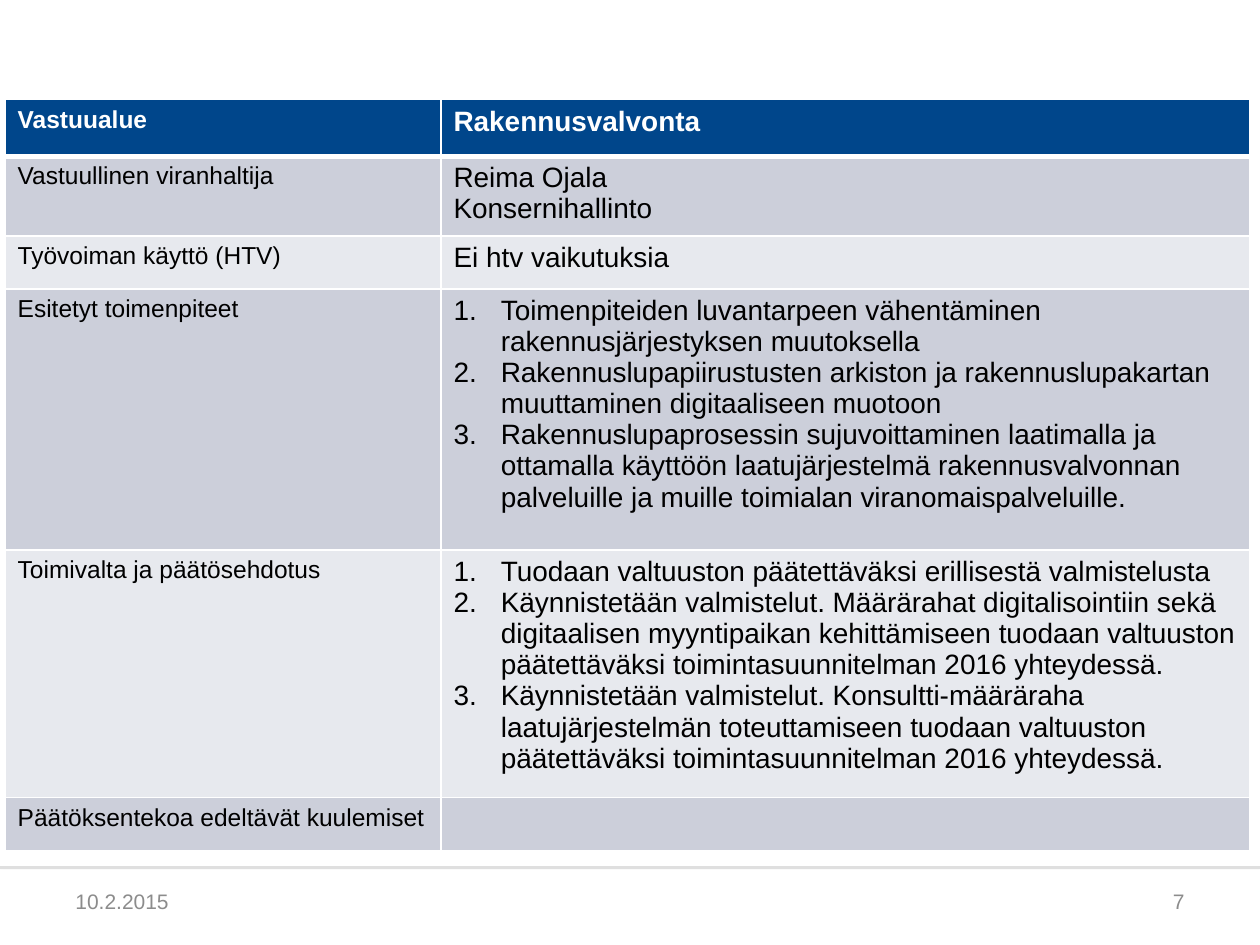
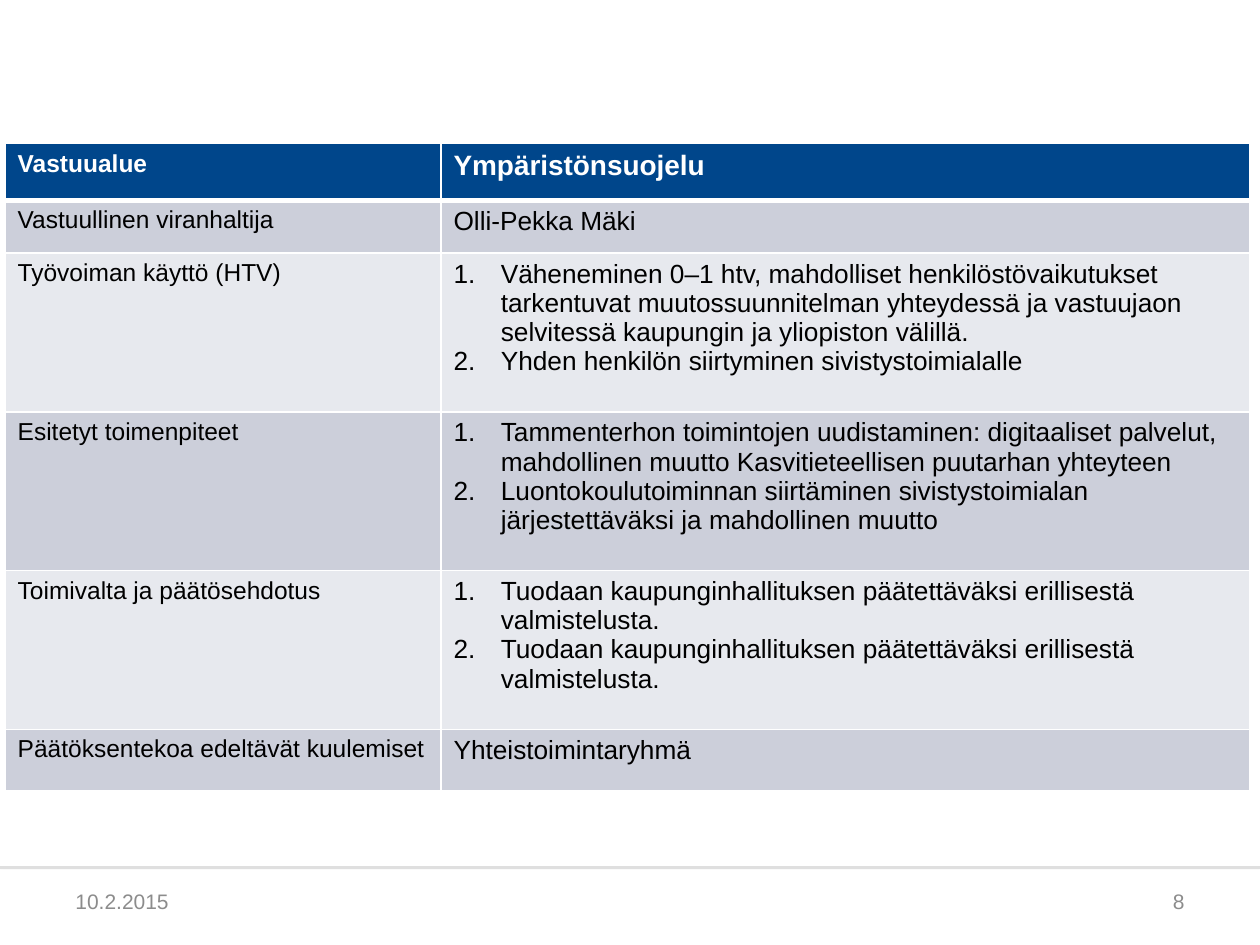
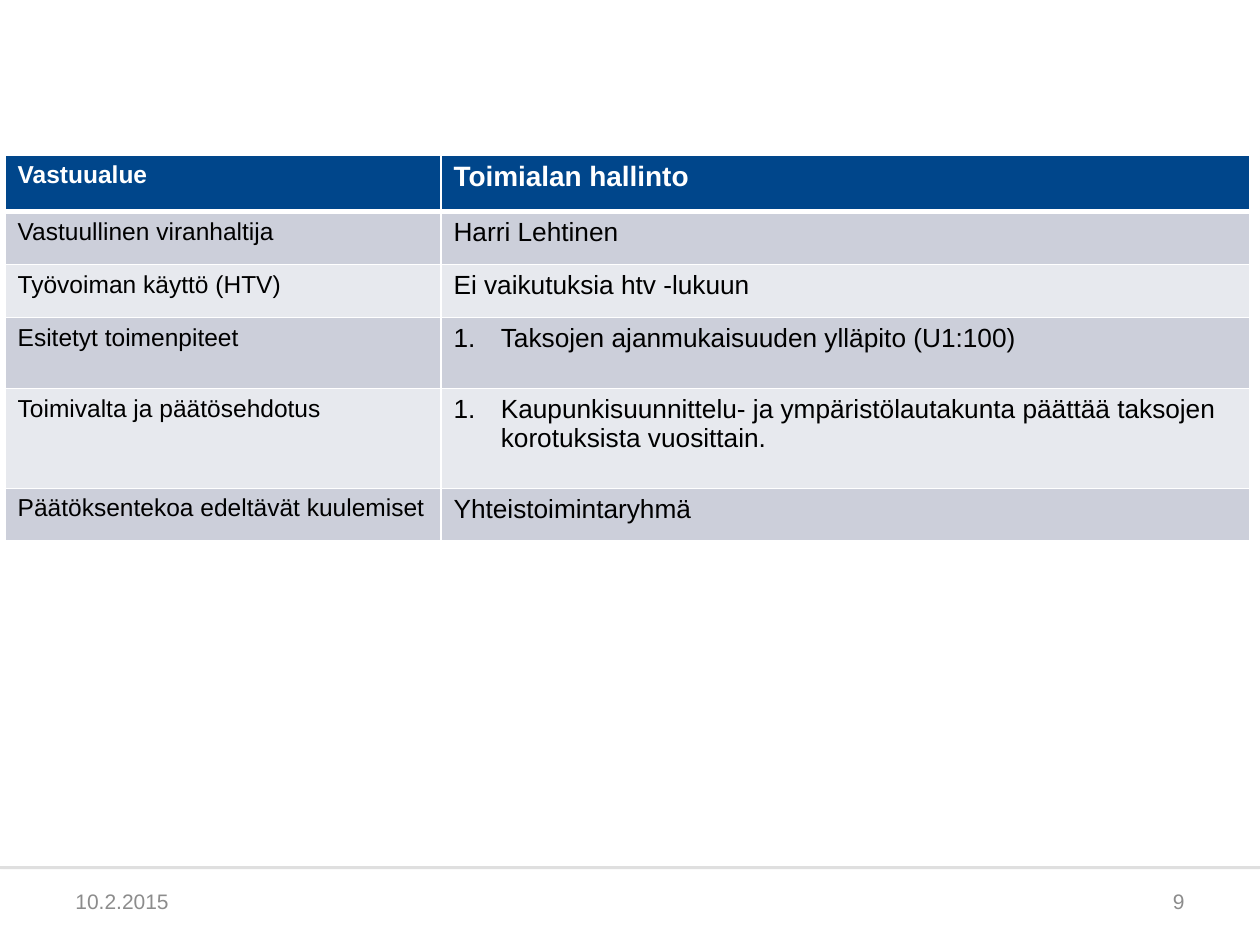
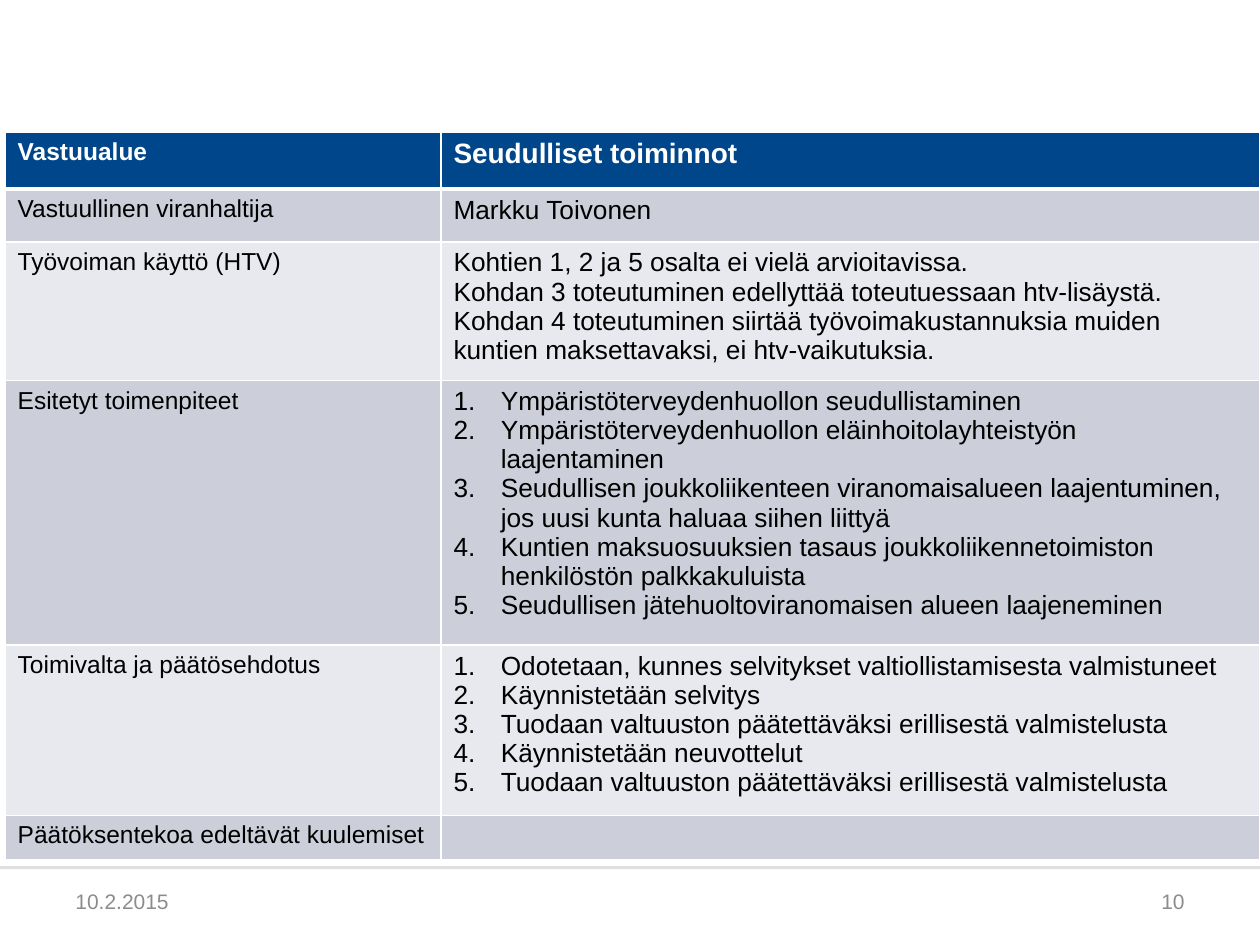
from lxml.etree import SubElement
from pptx import Presentation
from pptx.dml.color import RGBColor
from pptx.enum.shapes import MSO_CONNECTOR, MSO_SHAPE
from pptx.enum.text import MSO_ANCHOR, PP_ALIGN
from pptx.oxml.ns import qn
from pptx.util import Pt

FONT = "Arial"
WHITE, BLACK, GREY, RULE = "FFFFFF", "000000", "8C8C8C", "DFDFDF"
HEAD, DARK, LIGHT = "00468B", "CCCFDA", "E7E9EE"
WIDE, HIGH = 720, 540
DATE, FIRST = "10.2.2015", 7
LEFT, LABEL = 2.9, 249.1
LABELS = ["Vastuualue", "Vastuullinen viranhaltija", "Työvoiman käyttö (HTV)",
          "Esitetyt toimenpiteet", "Toimivalta ja päätösehdotus",
          "Päätöksentekoa edeltävät kuulemiset"]

# Values in the order of LABELS; a list is numbered.
PAGES = [
    dict(top=56.9, width=462.2, size=16, rows=[32.4, 43, 30.2, 149.2, 131.4, 30.2], values=[
        "Rakennusvalvonta",
        "Reima Ojala\nKonsernihallinto",
        "Ei htv vaikutuksia",
        ["Toimenpiteiden luvantarpeen vähentäminen rakennusjärjestyksen muutoksella",
         "Rakennuslupapiirustusten arkiston ja rakennuslupakartan muuttaminen "
         "digitaaliseen muotoon",
         "Rakennuslupaprosessin sujuvoittaminen laatimalla ja ottamalla käyttöön "
         "laatujärjestelmä rakennusvalvonnan palveluille ja muille toimialan "
         "viranomaispalveluille."],
        ["Tuodaan valtuuston päätettäväksi erillisestä valmistelusta",
         "Käynnistetään valmistelut. Määrärahat digitalisointiin sekä digitaalisen "
         "myyntipaikan kehittämiseen tuodaan valtuuston päätettäväksi "
         "toimintasuunnitelman 2016 yhteydessä.",
         "Käynnistetään valmistelut. Konsultti-määräraha laatujärjestelmän "
         "toteuttamiseen tuodaan valtuuston päätettäväksi toimintasuunnitelman "
         "2016 yhteydessä."],
        ""]),
    dict(top=82.1, width=462.2, size=15, rows=[32.4, 30.2, 90.7, 90.7, 90.7, 35], values=[
        "Ympäristönsuojelu",
        "Olli-Pekka Mäki",
        ["Väheneminen 0–1 htv, mahdolliset henkilöstövaikutukset tarkentuvat "
         "muutossuunnitelman yhteydessä ja vastuujaon selvitessä kaupungin ja "
         "yliopiston välillä.",
         "Yhden henkilön siirtyminen sivistystoimialalle"],
        ["Tammenterhon toimintojen uudistaminen: digitaaliset palvelut, mahdollinen "
         "muutto Kasvitieteellisen puutarhan yhteyteen",
         "Luontokoulutoiminnan siirtäminen sivistystoimialan järjestettäväksi ja "
         "mahdollinen muutto"],
        ["Tuodaan kaupunginhallituksen päätettäväksi erillisestä valmistelusta."] * 2,
        "Yhteistoimintaryhmä"]),
    dict(top=88.6, width=462.2, size=15, rows=[32.4, 30.2, 30.2, 40.6, 57.1, 30.2], values=[
        "Toimialan hallinto",
        "Harri Lehtinen",
        "Ei vaikutuksia htv -lukuun",
        ["Taksojen ajanmukaisuuden ylläpito (U1:100)"],
        ["Kaupunkisuunnittelu- ja ympäristölautakunta päättää taksojen korotuksista "
         "vuosittain."],
        "Yhteistoimintaryhmä"]),
    dict(top=75.6, width=468, size=15, rows=[32.4, 30.2, 74, 140.3, 90.7, 25.4], values=[
        "Seudulliset toiminnot",
        "Markku Toivonen",
        "Kohtien 1, 2 ja 5 osalta ei vielä arvioitavissa.\n"
        "Kohdan 3 toteutuminen edellyttää toteutuessaan htv-lisäystä.\n"
        "Kohdan 4 toteutuminen siirtää työvoimakustannuksia muiden kuntien "
        "maksettavaksi, ei htv-vaikutuksia.",
        ["Ympäristöterveydenhuollon seudullistaminen",
         "Ympäristöterveydenhuollon eläinhoitolayhteistyön laajentaminen",
         "Seudullisen joukkoliikenteen viranomaisalueen laajentuminen, jos uusi "
         "kunta haluaa siihen liittyä",
         "Kuntien maksuosuuksien tasaus joukkoliikennetoimiston henkilöstön "
         "palkkakuluista",
         "Seudullisen jätehuoltoviranomaisen alueen laajeneminen"],
        ["Odotetaan, kunnes selvitykset valtiollistamisesta valmistuneet",
         "Käynnistetään selvitys",
         "Tuodaan valtuuston päätettäväksi erillisestä valmistelusta",
         "Käynnistetään neuvottelut",
         "Tuodaan valtuuston päätettäväksi erillisestä valmistelusta"],
        ""]),
]


def color(code):
    return RGBColor.from_string(code)


def tint(node, code):
    """Append a solid fill to an XML node and return its colour element."""
    fill = SubElement(node, qn("a:solidFill"))
    return SubElement(fill, qn("a:srgbClr"), val=code)


def number(par):
    """Give a paragraph a hanging automatic number."""
    props = par._p.get_or_add_pPr()
    props.set("marL", str(Pt(27)))
    props.set("indent", str(-Pt(27)))
    SubElement(props, qn("a:buFont"), typeface="+mj-lt")
    SubElement(props, qn("a:buAutoNum"), type="arabicPeriod")


def border(cell, top, bottom):
    props = cell._tc.get_or_add_tcPr()
    for side, width in zip("LRTB", (1, 1, top, bottom)):
        line = SubElement(props, qn("a:ln" + side), w=str(Pt(width)))
        tint(line, WHITE)


class Deck:
    def __init__(self):
        self.prs = Presentation()
        self.prs.slide_width, self.prs.slide_height = Pt(WIDE), Pt(HIGH)
        self.slide = None

    def page(self):
        self.slide = self.prs.slides.add_slide(self.prs.slide_layouts[6])

    def band(self):
        """Draw the bottom band and its rule, and move both to the master."""
        shapes = self.slide.shapes
        band = shapes.add_shape(MSO_SHAPE.RECTANGLE, 0, Pt(496.8), Pt(WIDE), Pt(43.2))
        band.fill.solid()
        band.fill.fore_color.rgb = color(WHITE)
        band.line.fill.background()
        band.shadow.inherit = False
        effect = band._element.spPr.find(qn("a:effectLst"))
        shade = SubElement(effect, qn("a:outerShdw"), blurRad=str(Pt(3.1)),
                           dist=str(Pt(1.8)), dir="5400000", rotWithShape="0")
        SubElement(tint_free(shade), qn("a:alpha"), val="35000")

        rule = shapes.add_connector(MSO_CONNECTOR.STRAIGHT, 0, Pt(496), Pt(WIDE), Pt(496))
        rule.line.color.rgb = color(RULE)
        rule.line.width = Pt(1.75)
        SubElement(rule._element.spPr, qn("a:effectLst"))

        for key, shape in enumerate((band, rule), 90):
            shape._element.xpath(".//p:cNvPr")[0].set("id", str(key))
            self.prs.slide_master.shapes._spTree.append(shape._element)

    def style(self, par, size, code, bold=False):
        for run in par.runs:
            font = run.font
            font.name, font.size, font.bold = FONT, Pt(size), bold
            font.color.rgb = color(code)
        if not par.runs:
            SubElement(par._p, qn("a:endParaRPr"), sz=str(size * 100))

    def note(self, text, left, align):
        """Add one footer text."""
        box = self.slide.shapes.add_textbox(Pt(left), Pt(500.4), Pt(168), Pt(28.8))
        frame = box.text_frame
        frame.word_wrap = True
        frame.vertical_anchor = MSO_ANCHOR.MIDDLE
        frame.text = text
        par = frame.paragraphs[0]
        par.alignment = align
        self.style(par, 12, GREY)

    def cell(self, cell, value, row, size):
        head = row == 0
        border(cell, 3 if row == 1 else 1, 3 if head else 1)
        cell.fill.solid()
        cell.fill.fore_color.rgb = color(HEAD if head else DARK if row % 2 else LIGHT)
        listed = isinstance(value, list)
        cell.text_frame.text = "\n".join(value) if listed else value
        for par in cell.text_frame.paragraphs:
            if listed:
                number(par)
            self.style(par, size, WHITE if head else BLACK, head)

    def table(self, top, width, size, rows, values):
        frame = self.slide.shapes.add_table(len(rows), 2, Pt(LEFT), Pt(top),
                                            Pt(LABEL + width), Pt(sum(rows)))
        table = frame.table
        table.columns[0].width, table.columns[1].width = Pt(LABEL), Pt(width)
        for row, (high, label, value) in enumerate(zip(rows, LABELS, values)):
            table.rows[row].height = Pt(high)
            self.cell(table.cell(row, 0), label, row, 14)
            self.cell(table.cell(row, 1), value, row, size if row else 16)


def tint_free(node):
    """Append a bare black colour, as an effect needs it."""
    return SubElement(node, qn("a:srgbClr"), val=BLACK)


def main():
    deck = Deck()
    for count, page in enumerate(PAGES, FIRST):
        deck.page()
        if count == FIRST:
            deck.band()
        deck.note(DATE, 36, PP_ALIGN.LEFT)
        deck.note(str(count), 516, PP_ALIGN.RIGHT)
        deck.table(**page)
    deck.prs.save("out.pptx")


if __name__ == "__main__":
    main()
